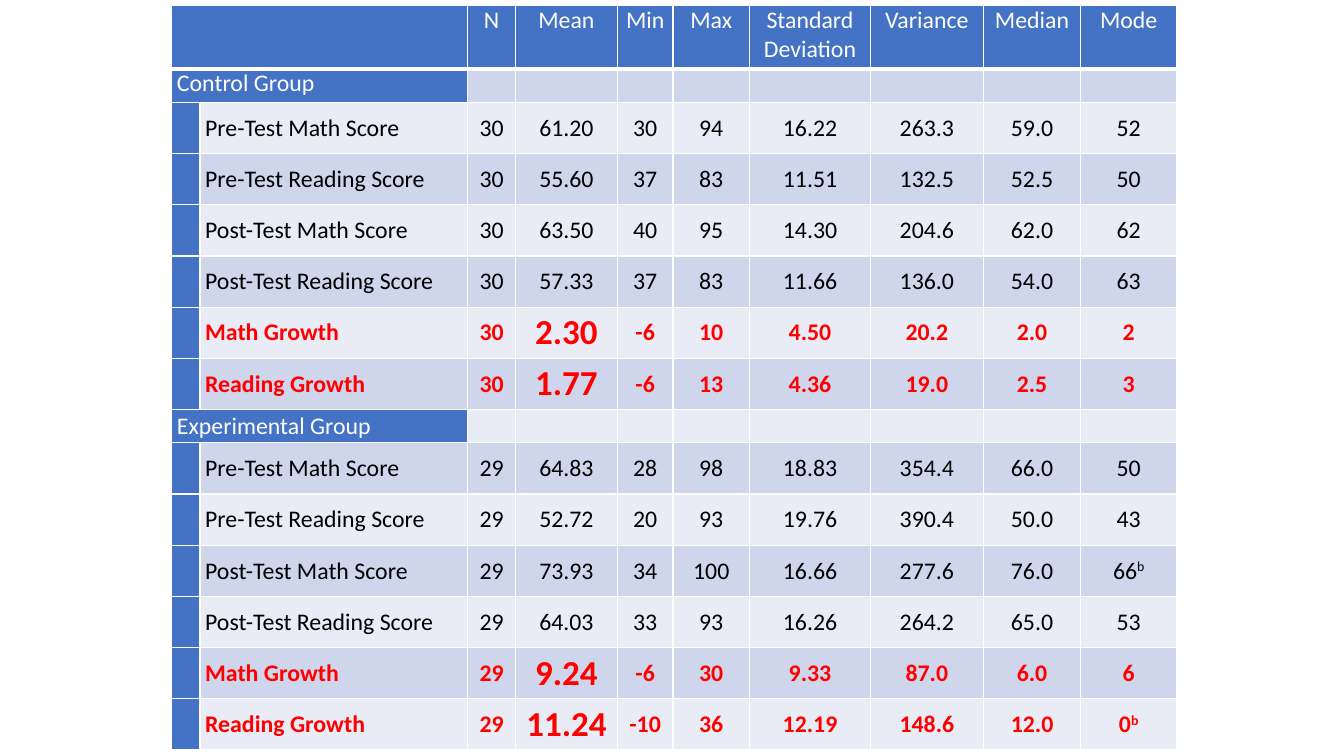
from dataclasses import dataclass

from lxml import etree
from pptx import Presentation
from pptx import table as tables
from pptx import util as u
from pptx.dml import color
from pptx.enum import text
from pptx.oxml import ns


@dataclass(frozen=True)
class Theme:
    font: str = "Calibri"
    body_size: int = 17
    key_size: int = 25
    header: str = "4472C4"
    dark_band: str = "CFD5EA"
    light_band: str = "E9EBF5"
    white: str = "FFFFFF"
    black: str = "000000"
    growth: str = "FF0000"


@dataclass(frozen=True)
class Column:
    title: str
    width: float


@dataclass(frozen=True)
class Score:
    name: str
    values: str  # separated by spaces; ^ starts a superscript

    @property
    def is_growth(self) -> bool:
        return self.name.endswith("Growth")


@dataclass(frozen=True)
class Group:
    name: str
    anchor: text.MSO_ANCHOR
    scores: tuple[Score, ...]


@dataclass(frozen=True)
class CellStyle:
    fill: str
    font_color: str
    alignment: text.PP_ALIGN = text.PP_ALIGN.CENTER
    anchor: text.MSO_ANCHOR = text.MSO_ANCHOR.MIDDLE
    size: int = Theme.body_size
    bold: bool = False
    bottom_border: int = 1


THEME = Theme()
HEADER_HEIGHT, GROUP_HEIGHT, SCORE_HEIGHT = 1.6, 0.84, 1.29
MEAN_COLUMN = 3

COLUMNS = (
    Column("", 0.71), Column("", 6.75), Column("N", 1.2), Column("Mean", 2.57),
    Column("Min", 1.4), Column("Max", 1.93), Column("Standard Deviation", 3.05),
    Column("Variance", 2.84), Column("Median", 2.46), Column("Mode", 2.41),
)

GROUPS = (
    Group("Control Group", text.MSO_ANCHOR.TOP, (
        Score("Pre-Test Math Score", "30 61.20 30 94 16.22 263.3 59.0 52"),
        Score("Pre-Test Reading Score", "30 55.60 37 83 11.51 132.5 52.5 50"),
        Score("Post-Test Math Score", "30 63.50 40 95 14.30 204.6 62.0 62"),
        Score("Post-Test Reading Score", "30 57.33 37 83 11.66 136.0 54.0 63"),
        Score("Math Growth", "30 2.30 -6 10 4.50 20.2 2.0 2"),
        Score("Reading Growth", "30 1.77 -6 13 4.36 19.0 2.5 3"),
    )),
    Group("Experimental Group", text.MSO_ANCHOR.MIDDLE, (
        Score("Pre-Test Math Score", "29 64.83 28 98 18.83 354.4 66.0 50"),
        Score("Pre-Test Reading Score", "29 52.72 20 93 19.76 390.4 50.0 43"),
        Score("Post-Test Math Score", "29 73.93 34 100 16.66 277.6 76.0 66^b"),
        Score("Post-Test Reading Score", "29 64.03 33 93 16.26 264.2 65.0 53"),
        Score("Math Growth", "29 9.24 -6 30 9.33 87.0 6.0 6"),
        Score("Reading Growth", "29 11.24 -10 36 12.19 148.6 12.0 0^b"),
    )),
)


def add_borders(cell: tables._Cell, bottom_width: int) -> None:
    properties = cell._tc.get_or_add_tcPr()
    for side, width in (("L", 1), ("R", 1), ("T", 1), ("B", bottom_width)):
        line = etree.SubElement(properties, ns.qn(f"a:ln{side}"), w=str(u.Pt(width)))
        solid = etree.SubElement(line, ns.qn("a:solidFill"))
        etree.SubElement(solid, ns.qn("a:srgbClr"), val=THEME.white)


def write_cell(cell: tables._Cell, content: str, style: CellStyle) -> None:
    add_borders(cell, style.bottom_border)
    cell.fill.solid()
    cell.fill.fore_color.rgb = color.RGBColor.from_string(style.fill)
    cell.margin_left = cell.margin_right = u.Cm(0.13)
    cell.margin_top = cell.margin_bottom = 0
    cell.vertical_anchor = style.anchor
    if not content:
        return
    base, _, superscript = content.partition("^")
    cell.text_frame.text = base
    paragraph = cell.text_frame.paragraphs[0]
    paragraph.alignment = style.alignment
    if superscript:
        run = paragraph.add_run()
        run.text = superscript
        run._r.get_or_add_rPr().set("baseline", "30000")
    for run in paragraph.runs:
        run.font.name = THEME.font
        run.font.size = u.Pt(style.size)
        run.font.bold = style.bold
        run.font.color.rgb = color.RGBColor.from_string(style.font_color)


def band_color(row: int) -> str:
    return THEME.dark_band if row % 2 else THEME.light_band


def write_header(table: tables.Table) -> None:
    table.rows[0].height = u.Cm(HEADER_HEIGHT)
    style = CellStyle(THEME.header, THEME.white, anchor=text.MSO_ANCHOR.TOP, bottom_border=3)
    for index, column in enumerate(COLUMNS):
        table.columns[index].width = u.Cm(column.width)
        write_cell(table.cell(0, index), column.title, style)
    table.cell(0, 0).merge(table.cell(0, 1))


def write_group_row(table: tables.Table, row: int, group: Group) -> None:
    table.rows[row].height = u.Cm(GROUP_HEIGHT)
    title = CellStyle(THEME.header, THEME.white, text.PP_ALIGN.JUSTIFY, group.anchor)
    empty = CellStyle(band_color(row), THEME.black)
    for index in range(len(COLUMNS)):
        write_cell(table.cell(row, index), "" if index else group.name,
                   title if index < 2 else empty)
    table.cell(row, 0).merge(table.cell(row, 1))


def write_score_row(table: tables.Table, row: int, score: Score) -> None:
    table.rows[row].height = u.Cm(SCORE_HEIGHT)
    font_color = THEME.growth if score.is_growth else THEME.black
    for index, content in enumerate(("", score.name, *score.values.split())):
        is_key = score.is_growth and index == MEAN_COLUMN
        write_cell(table.cell(row, index), content, CellStyle(
            fill=band_color(row) if index else THEME.header,
            font_color=font_color,
            alignment=text.PP_ALIGN.JUSTIFY if index == 1 else text.PP_ALIGN.CENTER,
            size=THEME.key_size if is_key else THEME.body_size,
            bold=score.is_growth,
        ))


def main() -> None:
    presentation = Presentation()
    presentation.slide_width, presentation.slide_height = u.Cm(33.87), u.Cm(19.05)
    slide = presentation.slides.add_slide(presentation.slide_layouts[6])

    row_count = 1 + sum(1 + len(group.scores) for group in GROUPS)
    width = sum(column.width for column in COLUMNS)
    table = slide.shapes.add_table(row_count, len(COLUMNS), u.Cm(4.33), u.Cm(0.14),
                                   u.Cm(width), u.Cm(18.76)).table
    table.first_row = table.horz_banding = False

    write_header(table)
    row = 1
    for group in GROUPS:
        write_group_row(table, row, group)
        for row, score in enumerate(group.scores, start=row + 1):
            write_score_row(table, row, score)
        row += 1

    presentation.save("out.pptx")


if __name__ == "__main__":
    main()
